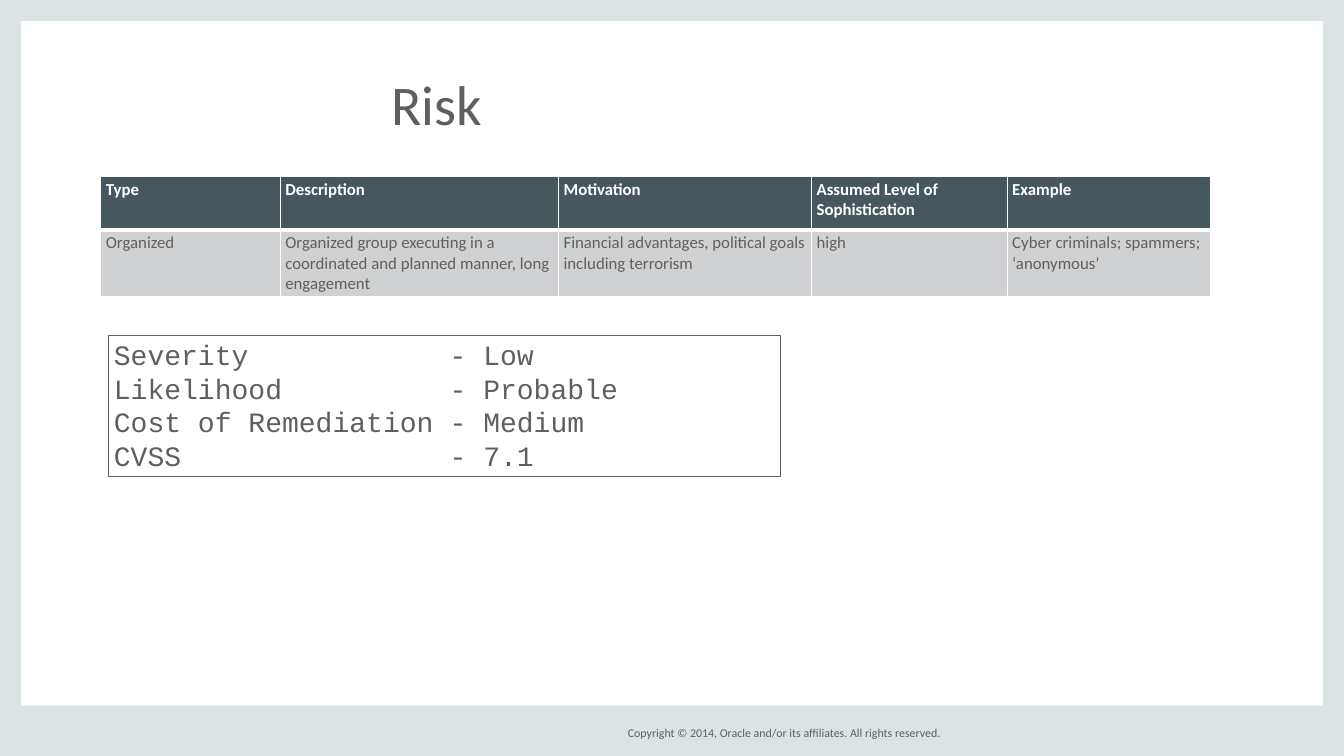
import pptx
import pptx.dml.color
import pptx.enum.shapes
import pptx.enum.text
import pptx.oxml
import pptx.oxml.ns
import pptx.util

Inches = pptx.util.Inches
ALIGN = pptx.enum.text.PP_ALIGN
ANCHOR = pptx.enum.text.MSO_ANCHOR
GRAY = "5F5F5F"
WHITE = "FFFFFF"
FRAME = "DCE3E4"
HEADER = "46575E"
BODY = "CFD1D2"

COLUMNS = [1.78, 2.76, 2.51, 1.94, 2.02]
ROWS = [0.53, 0.65]
THREATS = [
    ["Type", "Description", "Motivation", "Assumed Level of Sophistication", "Example"],
    ["Organized",
     "Organized group executing in a coordinated and planned manner, long engagement",
     "Financial advantages, political goals including terrorism",
     "high",
     "Cyber criminals; spammers; ‘anonymous’"],
]
RATINGS = [
    ("Severity", "Low"),
    ("Likelihood", "Probable"),
    ("Cost of Remediation", "Medium"),
    ("CVSS", "7.1"),
]


def rgb(value):
    """Return the colour for a hex string."""
    return pptx.dml.color.RGBColor.from_string(value)


def write(tf, text, size=12, font="Calibri", color=GRAY, bold=False, align=ALIGN.LEFT, tab=None):
    """Fill a text frame with one paragraph per line of text."""
    for i, line in enumerate(text.split("\n")):
        p = tf.paragraphs[0] if i == 0 else tf.add_paragraph()
        p.alignment = align
        if tab:
            tabs = pptx.oxml.parse_xml(
                f'<a:tabLst {pptx.oxml.ns.nsdecls("a")}><a:tab pos="{Inches(tab)}" algn="l"/></a:tabLst>')
            p._p.get_or_add_pPr().append(tabs)
        r = p.add_run()
        r.text = line
        r.font.size = pptx.util.Pt(size)
        r.font.name = font
        r.font.bold = bold
        r.font.color.rgb = rgb(color)


def add_text(slide, box, text, inset=(0.05, 0.02), anchor=ANCHOR.TOP, **style):
    """Place a wrapped text box and return it."""
    sp = slide.shapes.add_textbox(*map(Inches, box))
    tf = sp.text_frame
    tf.word_wrap = True
    tf.vertical_anchor = anchor
    tf.margin_left = tf.margin_right = Inches(inset[0])
    tf.margin_top = tf.margin_bottom = Inches(inset[1])
    write(tf, text, **style)
    return sp


def add_frame(slide, width, height, edge=0.21, foot=0.5):
    """Draw the four bands around the slide."""
    bands = [
        (0, 0, edge, height),
        (width - edge, 0, edge, height),
        (0, height - foot, width, foot),
        (0, 0, width, edge),
    ]
    for band in bands:
        sp = slide.shapes.add_shape(pptx.enum.shapes.MSO_SHAPE.RECTANGLE, *map(Inches, band))
        sp.shadow.inherit = False
        sp.fill.solid()
        sp.fill.fore_color.rgb = rgb(FRAME)
        sp.line.fill.background()


def set_borders(cell, bottom):
    """Give a cell white borders with its own bottom width."""
    tcPr = cell._tc.get_or_add_tcPr()
    widths = {"lnL": 1, "lnR": 1, "lnT": 1, "lnB": bottom}
    for i, (side, width) in enumerate(widths.items()):
        tcPr.insert(i, pptx.oxml.parse_xml(
            f'<a:{side} {pptx.oxml.ns.nsdecls("a")} w="{pptx.util.Pt(width)}">'
            f'<a:solidFill><a:srgbClr val="{WHITE}"/></a:solidFill></a:{side}>'))


def add_threat_table(slide, left, top):
    """Build the threat table with its dark header row."""
    frame = slide.shapes.add_table(len(ROWS), len(COLUMNS), Inches(left), Inches(top),
                                   Inches(sum(COLUMNS)), Inches(sum(ROWS)))
    table = frame.table
    for column, width in zip(table.columns, COLUMNS):
        column.width = Inches(width)
    for i, (row, height) in enumerate(zip(table.rows, ROWS)):
        row.height = Inches(height)
        head = i == 0
        for cell, text in zip(row.cells, THREATS[i]):
            cell.margin_left = cell.margin_right = Inches(0.05)
            cell.margin_top = cell.margin_bottom = Inches(0.03)
            cell.fill.solid()
            cell.fill.fore_color.rgb = rgb(HEADER if head else BODY)
            set_borders(cell, 3 if head else 1)
            write(cell.text_frame, text, color=WHITE if head else GRAY, bold=head)


def add_ratings(slide, box):
    """Place the outlined list of risk ratings."""
    text = "\n".join(f"{name}\t- {value}" for name, value in RATINGS)
    sp = add_text(slide, box, text, size=20, font="Courier New", tab=3.33)
    sp.line.color.rgb = rgb(GRAY)
    sp.line.width = pptx.util.Pt(0.75)


def main():
    """Build the risk slide and save it."""
    prs = pptx.Presentation()
    prs.slide_width, prs.slide_height = Inches(13.33), Inches(7.5)
    slide = prs.slides.add_slide(prs.slide_layouts[6])
    add_frame(slide, 13.33, 7.5)
    add_text(slide, (5.88, 7.17, 3.45, 0.2),
             "Copyright © 2014, Oracle and/or its affiliates. All rights reserved.",
             inset=(0, 0), anchor=ANCHOR.MIDDLE, size=8.5, align=ALIGN.RIGHT)
    add_text(slide, (3.83, 0.67, 4.62, 0.72), "Risk", size=40)
    add_ratings(slide, (1.08, 3.33, 6.66, 1.4))
    add_threat_table(slide, 1, 1.75)
    prs.save("out.pptx")


if __name__ == "__main__":
    main()
